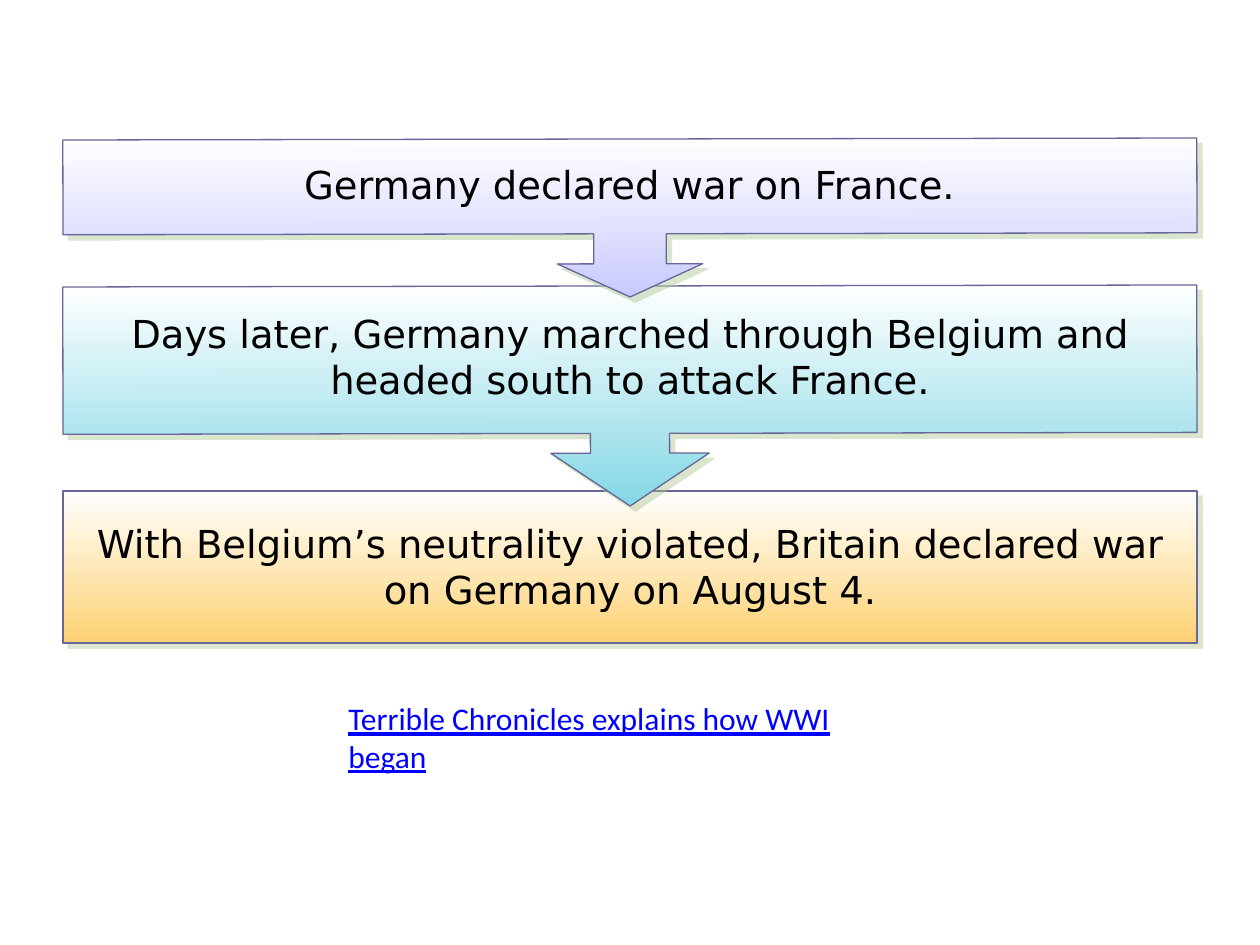
from lxml import etree
from pptx import Presentation
from pptx import util as u
from pptx.dml.color import RGBColor
from pptx.enum import shapes, text
from pptx.oxml.ns import qn

SCALE = u.Inches(1) / 126
BLACK = RGBColor(0x00, 0x00, 0x00)
WHITE = RGBColor(0xFF, 0xFF, 0xFF)
BORDER = RGBColor(0x66, 0x66, 0x99)
LILAC = RGBColor(0xC9, 0xC9, 0xFF)
TEAL = RGBColor(0x83, 0xD7, 0xE5)
AMBER = RGBColor(0xFE, 0xD2, 0x73)
LINK_BLUE = RGBColor(0x00, 0x00, 0xFF)
SHADOW = RGBColor(0xAD, 0xC7, 0x93)
SHADOW_WARM = RGBColor(0xB3, 0xC7, 0x93)
DOWN_CALLOUT = shapes.MSO_SHAPE.DOWN_ARROW_CALLOUT
RECTANGLE = shapes.MSO_SHAPE.RECTANGLE


def px(*lengths):
    """Turn pixel lengths into EMU."""
    return [u.Emu(round(length * SCALE)) for length in lengths]


def add_shadow(shape, color):
    """Give the shape a hard shadow towards the lower right."""
    shape.shadow.inherit = False
    effects = shape._element.spPr.find(qn("a:effectLst"))
    outer = etree.SubElement(effects, qn("a:outerShdw"), blurRad="0",
                             dist=str(u.Pt(4.2)), dir="2700000",
                             algn="ctr", rotWithShape="0")
    tone = etree.SubElement(outer, qn("a:srgbClr"), val=str(color))
    etree.SubElement(tone, qn("a:alpha"), val="46000")


def add_panel(page, kind, area, color, shadow, adjustments=(), rotation=0):
    """Add a step panel that fades from white down to its colour."""
    panel = page.shapes.add_shape(kind, *px(*area))
    for index, value in enumerate(adjustments):
        panel.adjustments[index] = value
    panel.rotation = rotation
    panel.fill.gradient()
    panel.fill.gradient_angle = 270
    for stop, position, tone in zip(panel.fill.gradient_stops, (0, 1), (WHITE, color)):
        stop.position = position
        stop.color.rgb = tone
    panel.line.color.rgb = BORDER
    panel.line.width = u.Pt(0.75)
    add_shadow(panel, shadow)


def add_text(page, area, wording, size=22, font="DejaVu Sans", color=BLACK,
             align=text.PP_ALIGN.CENTER, wrap=True, underline=False, space_after=0):
    """Add a one-paragraph text box."""
    box = page.shapes.add_textbox(*px(*area))
    frame = box.text_frame
    frame.text = wording
    frame.word_wrap = wrap
    frame.auto_size = text.MSO_AUTO_SIZE.SHAPE_TO_FIT_TEXT
    para = frame.paragraphs[0]
    para.alignment = align
    para.space_after = u.Pt(space_after)
    span = para.runs[0]
    span.font.size = u.Pt(size)
    span.font.name = font
    span.font.color.rgb = color
    span.font.underline = underline


def main():
    """Build the slide on the steps to war."""
    deck = Presentation()
    deck.slide_width, deck.slide_height = px(1260, 945)
    page = deck.slides.add_slide(deck.slide_layouts[6])

    add_panel(page, RECTANGLE, (63, 491, 1134, 152), AMBER, SHADOW_WARM)
    add_text(page, (84, 514, 1092, 117),
             "With Belgium’s neutrality violated, Britain declared war on Germany on August 4.",
             space_after=6)
    add_panel(page, DOWN_CALLOUT, (63, 286, 1134, 220), TEAL, SHADOW,
              (0.36, 0.36, 0.24, 0.67), 359.9)
    add_text(page, (63, 304, 1134, 106),
             "Days later, Germany marched through Belgium and headed south to attack France.")
    add_panel(page, DOWN_CALLOUT, (63, 139, 1134, 158), LILAC, SHADOW,
              (0.46, 0.46, 0.21, 0.6), 359.9)
    add_text(page, (94, 155, 1071, 59), "Germany declared war on France.")
    add_text(page, (336, 693, 586, 50), "Terrible Chronicles explains how WWI began",
             size=18, font="Calibri", color=LINK_BLUE, align=text.PP_ALIGN.LEFT,
             wrap=False, underline=True)
    deck.save("out.pptx")


if __name__ == "__main__":
    main()
